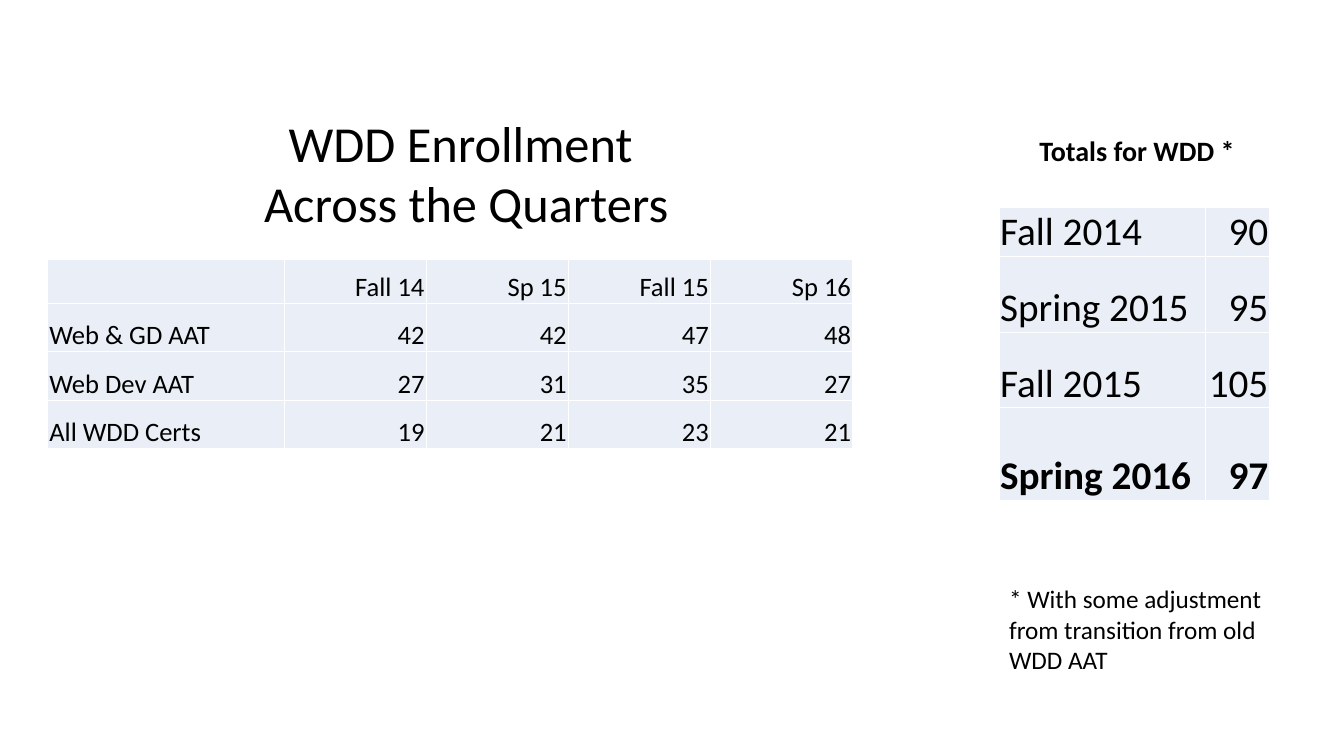
from lxml import etree
from pptx import Presentation
from pptx import util as u
from pptx.dml.color import RGBColor
from pptx.enum import text
from pptx.oxml import ns

BLACK = RGBColor(0x00, 0x00, 0x00)
WHITE = RGBColor(0xFF, 0xFF, 0xFF)
PALE_BLUE = RGBColor(0xEA, 0xEF, 0xF7)
FONT = "Calibri"

TOTALS = [
    ("Fall 2014", "90"),
    ("Spring 2015", "95"),
    ("Fall 2015", "105"),
    ("Spring 2016", "97"),
]
ENROLLMENT = [
    ("", "Fall 14", "Sp 15", "Fall 15", "Sp 16"),
    ("Web & GD AAT", "42", "42", "47", "48"),
    ("Web Dev AAT", "27", "31", "35", "27"),
    ("All WDD Certs", "19", "21", "23", "21"),
]


def set_all(target, values):
    for name, value in values.items():
        setattr(target, name, value)


def style_font(font, size, bold=False):
    set_all(font, {"name": FONT, "size": u.Pt(size), "bold": bold})
    font.color.rgb = BLACK


def add_text(page, place, lines, size, align, bold=False):
    """Add a wrapped text box with line breaks between the lines."""
    box = page.shapes.add_textbox(*map(u.Inches, place))
    box.text_frame.word_wrap = True
    para = box.text_frame.paragraphs[0]
    para.alignment = align
    for number, line in enumerate(lines):
        if number:
            para.add_line_break()
        span = para.add_run()
        span.text = line
        style_font(span.font, size, bold)


def add_borders(cell):
    """Draw a thin white line on each side of a cell."""
    props = cell._tc.get_or_add_tcPr()
    for side in ("a:lnL", "a:lnR", "a:lnT", "a:lnB"):
        line = etree.SubElement(props, ns.qn(side), w=str(u.Pt(1)))
        fill = etree.SubElement(line, ns.qn("a:solidFill"))
        etree.SubElement(fill, ns.qn("a:srgbClr"), val=str(WHITE))


def style_cell(cell, words, size, margin, align, bold):
    set_all(cell, {
        "text": words,
        "vertical_anchor": text.MSO_ANCHOR.BOTTOM,
        "margin_left": margin,
        "margin_right": margin,
        "margin_top": margin,
        "margin_bottom": 0,
    })
    para = cell.text_frame.paragraphs[0]
    para.alignment = align
    for span in para.runs:
        style_font(span.font, size, bold)
    add_borders(cell)
    cell.fill.solid()
    cell.fill.fore_color.rgb = PALE_BLUE


def add_grid(page, corner, widths, heights, rows, size, margin, bold_row=None):
    """Add a table with labels on the left and figures on the right."""
    extent = (sum(widths), sum(heights))
    frame = page.shapes.add_table(
        len(rows), len(widths), *map(u.Inches, corner + extent))
    table = frame.table
    set_all(table, {"first_row": False, "horz_banding": False})
    for column, width in zip(table.columns, widths):
        column.width = u.Inches(width)
    for row, height in zip(table.rows, heights):
        row.height = u.Inches(height)
    for r, values in enumerate(rows):
        for c, words in enumerate(values):
            align = text.PP_ALIGN.RIGHT if c else text.PP_ALIGN.LEFT
            style_cell(table.cell(r, c), words, size, u.Inches(margin),
                       align, r == bold_row)


def main():
    deck = Presentation()
    set_all(deck, {"slide_width": u.Inches(13.33),
                   "slide_height": u.Inches(7.5)})
    page = deck.slides.add_slide(deck.slide_layouts[6])

    # Totals and enrollment tables
    add_grid(page, (9.91, 2.06), [2.05, 0.63], [0.48, 0.75, 0.75, 0.92],
             TOTALS, 28, 0.01, bold_row=3)
    add_grid(page, (0.47, 2.57), [2.35] + [1.41] * 4, [0.44] + [0.48] * 3,
             ENROLLMENT, 19, 0.02)

    # Headings
    center = text.PP_ALIGN.CENTER
    add_text(page, (1.15, 1.06, 6.95, 1.31),
             ["WDD Enrollment ", "Across the Quarters"], 36, center)
    add_text(page, (9.62, 1.28, 3.25, 0.44), [" Totals for WDD *"], 20,
             center, bold=True)

    # Footnote
    add_text(page, (9.91, 5.74, 3.18, 1.01),
             ["* With some adjustment from transition from old WDD AAT"], 18,
             text.PP_ALIGN.LEFT)

    deck.save("out.pptx")


if __name__ == "__main__":
    main()
